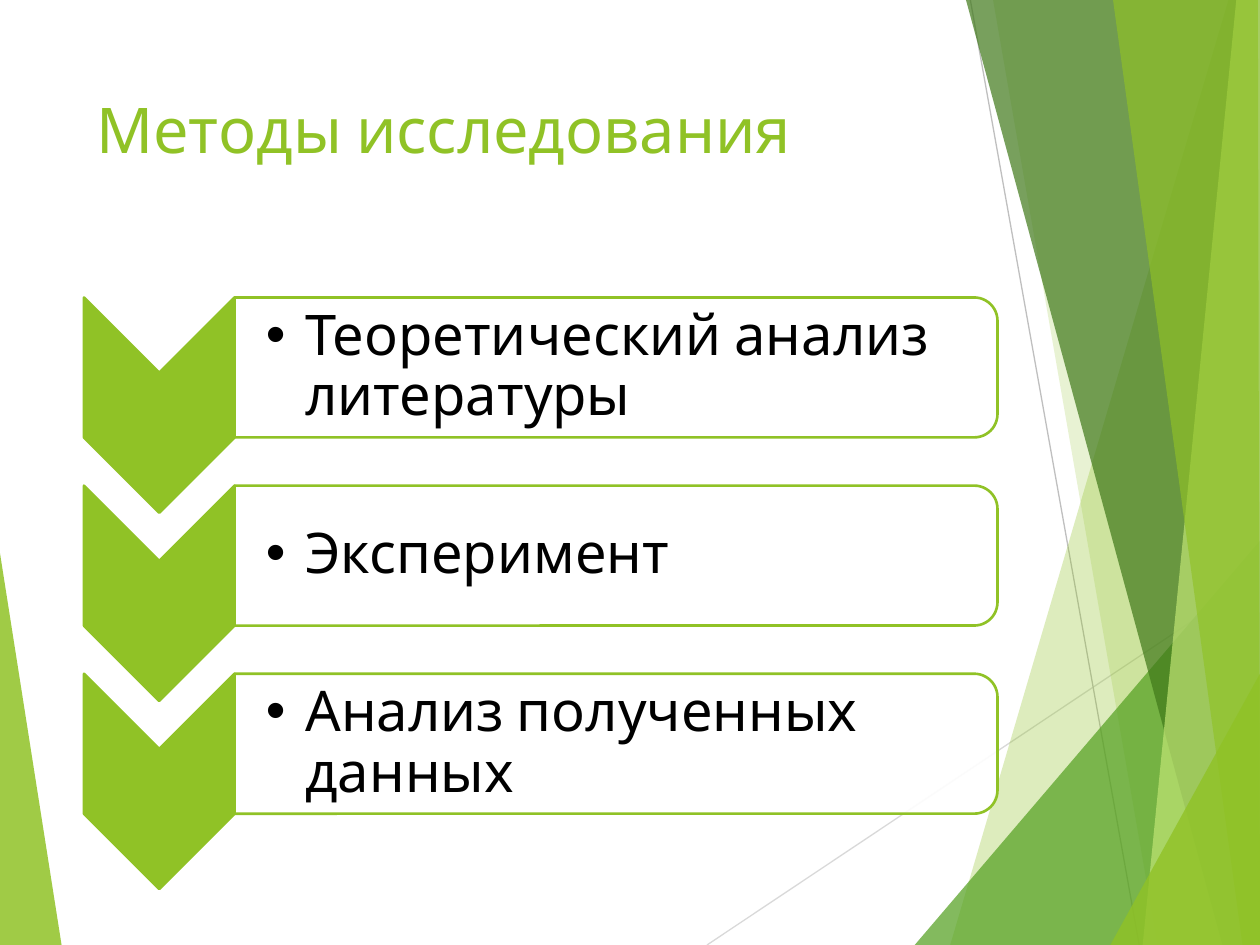
from dataclasses import dataclass

from lxml.etree import SubElement
from pptx import Presentation
from pptx.dml.color import RGBColor
from pptx.enum.shapes import MSO_CONNECTOR, MSO_SHAPE
from pptx.enum.text import MSO_ANCHOR
from pptx.oxml.ns import qn
from pptx.util import Pt


@dataclass(frozen=True)
class Theme:
    font: str = "Cabin"
    title_size: int = 36
    body_size: int = 32
    outline: float = 1.5
    hairline: float = 0.75
    lime: str = "90C226"
    green: str = "54A021"
    forest: str = "3F7819"
    pale: str = "C0E474"
    white: str = "FFFFFF"
    ink: str = "000000"
    light_gray: str = "D9D9D9"
    mid_gray: str = "BFBFBF"


THEME = Theme()
WIDTH, HEIGHT = 720, 540
METHODS = ["Теоретический анализ литературы", "Эксперимент", "Анализ полученных данных"]


def paint(shape, color, opacity=100, outline=None):
    shape.shadow.inherit = False
    shape.fill.solid()
    shape.fill.fore_color.rgb = RGBColor.from_string(color)
    if opacity < 100:
        color_node = shape.fill._xPr.find(qn("a:solidFill"))[0]
        SubElement(color_node, qn("a:alpha"), val=str(opacity * 1000))
    if outline:
        shape.line.color.rgb = RGBColor.from_string(outline)
        shape.line.width = Pt(THEME.outline)
    else:
        shape.line.fill.background()


def add_facet(slide, corners, color, opacity):
    (start_x, start_y), *others = [(Pt(x), Pt(y)) for x, y in corners]
    builder = slide.shapes.build_freeform(start_x, start_y)
    builder.add_line_segments(others, close=True)
    paint(builder.convert_to_shape(), color, opacity)


def add_hairline(slide, start, end, color):
    hairline = slide.shapes.add_connector(
        MSO_CONNECTOR.STRAIGHT, *[Pt(value) for value in (*start, *end)])
    hairline.line.color.rgb = RGBColor.from_string(color)
    hairline.line.width = Pt(THEME.hairline)
    SubElement(hairline._element.spPr, qn("a:effectLst"))


def add_backdrop(slide, left, top, width, height):
    """Draw the translucent facets and hairlines along the slide's edges."""
    right, bottom = left + width, top + height
    add_facet(slide, [(left, top + 316), (left + 35.2, bottom), (left, bottom)],
              THEME.lime, 85)
    add_hairline(slide, (left + 404, bottom), (right, top + 329), THEME.light_gray)
    add_hairline(slide, (left + 554.5, top), (left + 651, bottom), THEME.mid_gray)

    # Top-left x, bottom-left x, top-right x, colour, opacity
    bands = [
        (702, 543, 720, THEME.lime, 30),
        (567.5, 661.5, 720, THEME.lime, 20),
        None,
        (552, 698.5, 720, THEME.forest, 70),
        (706.5, 653, 720, THEME.pale, 70),
        (636, 710, 718.8, THEME.lime, 65),
    ]
    for band in bands:
        if band is None:
            add_corner(slide, left + 522.7, top + 309, right, bottom, THEME.green, 72)
            continue
        top_left, bottom_left, top_right, color, opacity = band
        add_facet(slide, [(left + top_left, top), (left + bottom_left, bottom),
                          (right, bottom), (left + top_right, top)], color, opacity)
    add_corner(slide, left + 634.5, top + 385, right, bottom, THEME.lime, 80)


def add_corner(slide, left, top, right, bottom, color, opacity):
    """Draw a triangle that fills the lower right corner of its box."""
    add_facet(slide, [(left, bottom), (right, top), (right, bottom)], color, opacity)


def add_text(slide, left, top, width, height, wording, size, color):
    box = slide.shapes.add_textbox(Pt(left), Pt(top), Pt(width), Pt(height))
    frame = box.text_frame
    frame.word_wrap = True
    paragraph = frame.paragraphs[0]
    paragraph.text = wording
    paragraph.font.name = THEME.font
    paragraph.font.size = Pt(size)
    paragraph.font.color.rgb = RGBColor.from_string(color)
    return frame


def add_turned(slide, preset, left, top, width, height):
    """Add a shape turned by 90 degrees whose visible bounds are the given box."""
    shape = slide.shapes.add_shape(
        preset, Pt(left + (width - height) / 2), Pt(top + (height - width) / 2),
        Pt(height), Pt(width))
    shape.rotation = 90
    return shape


def add_method(slide, left, top, width, height, wording):
    chevron_width, panel_height, panel_inset = 86, 80, 4
    panel_left, panel_width = left + chevron_width, width - chevron_width

    chevron = add_turned(slide, MSO_SHAPE.CHEVRON, left, top, chevron_width, height)
    paint(chevron, THEME.lime, outline=THEME.lime)
    panel = add_turned(slide, MSO_SHAPE.ROUND_2_SAME_RECTANGLE,
                       panel_left, top, panel_width, panel_height)
    paint(panel, THEME.white, 90, THEME.lime)

    frame = add_text(slide, panel_left, top + panel_inset, panel_width - panel_inset,
                     panel_height - 2 * panel_inset, wording,
                     THEME.body_size, THEME.ink)
    frame.vertical_anchor = MSO_ANCHOR.MIDDLE
    frame.margin_left = Pt(18)
    frame.margin_top = frame.margin_right = frame.margin_bottom = Pt(1.5)
    paragraph = frame.paragraphs[0]
    paragraph.line_spacing = 0.9
    properties = paragraph._p.get_or_add_pPr()
    properties.set("marL", str(Pt(22.5)))
    properties.set("indent", str(-Pt(22.5)))
    SubElement(properties, qn("a:buFont"), typeface="Arial")
    SubElement(properties, qn("a:buChar"), char="•")
    # Bullet nodes must precede the default run properties
    properties.append(properties.find(qn("a:defRPr")))


def add_methods(slide, left, top, width, height, methods):
    chevron_height = 123
    pitch = (height - chevron_height) / (len(methods) - 1)
    for index, wording in enumerate(methods):
        add_method(slide, left, top + index * pitch, width, chevron_height, wording)


def main():
    presentation = Presentation()
    presentation.slide_width, presentation.slide_height = Pt(WIDTH), Pt(HEIGHT)
    slide = presentation.slides.add_slide(presentation.slide_layouts[6])
    add_backdrop(slide, 0, 0, WIDTH, HEIGHT)
    add_text(slide, 48, 48, 500, 104, "Методы исследования",
             THEME.title_size, THEME.lime)
    add_methods(slide, 48, 170, 522, 338, METHODS)
    presentation.save("out.pptx")


if __name__ == "__main__":
    main()
